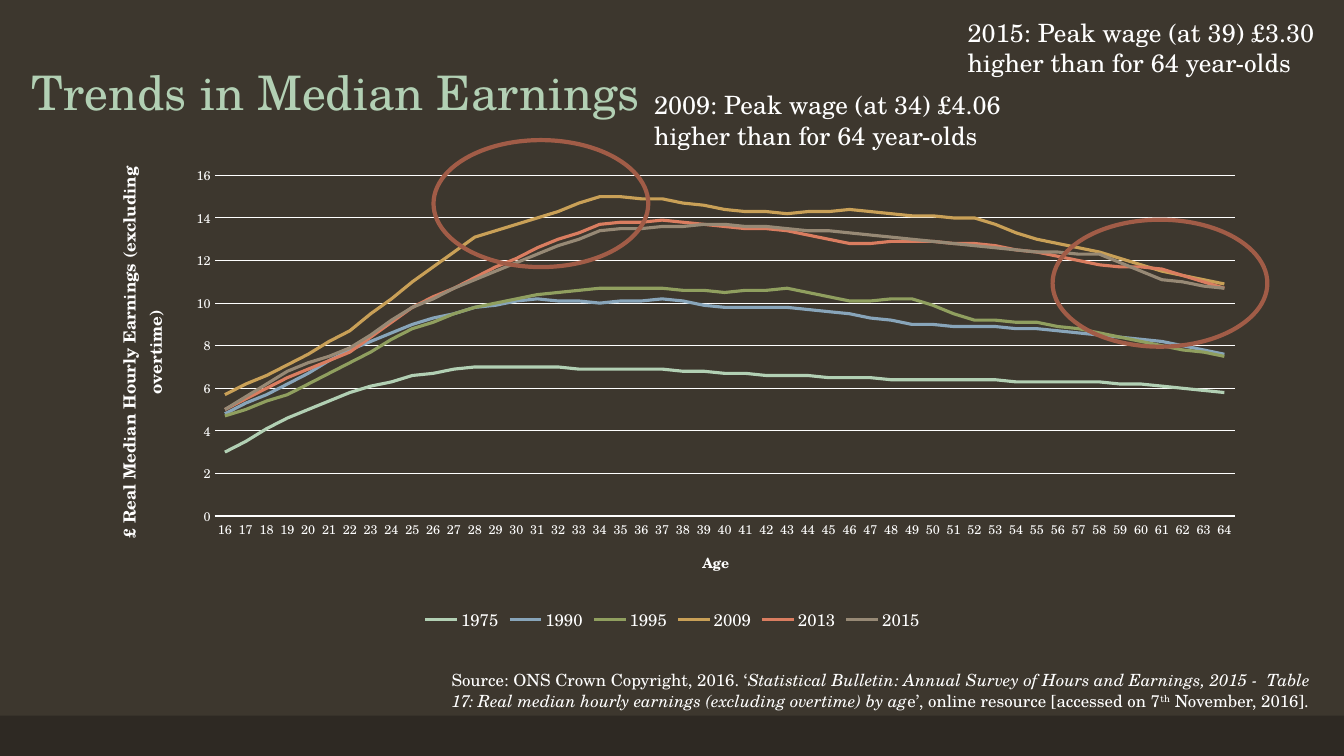
"""Build the slide on trends in median hourly earnings by age, interpolated from every third age."""
from lxml import etree
from pptx import Presentation
from pptx.chart.data import CategoryChartData
from pptx.dml.color import RGBColor
from pptx.enum.chart import XL_CHART_TYPE, XL_LEGEND_POSITION, XL_MARKER_STYLE, XL_TICK_MARK
from pptx.enum.shapes import MSO_SHAPE
from pptx.enum.text import MSO_ANCHOR
from pptx.oxml.ns import qn
from pptx.util import Inches, Pt

FONT = "TeX Gyre Schola"
WHITE = "FFFFFF"
BACKGROUND = "3D372E"
AGE_STEP = 3


def color(hex_code):
    return RGBColor.from_string(hex_code)


def add_text(runs, left, top, width, height, size=18, fill=WHITE, anchor=MSO_ANCHOR.TOP, spacing=1.0):
    frame = slide.shapes.add_textbox(Inches(left), Inches(top), Inches(width), Inches(height)).text_frame
    frame.word_wrap = True
    frame.vertical_anchor = anchor
    paragraph = frame.paragraphs[0]
    paragraph.line_spacing = spacing
    for words, style in runs:
        run = paragraph.add_run()
        run.text = words
        run.font.name = FONT
        run.font.size = Pt(size)
        run.font.color.rgb = color(fill)
        run.font.italic = style == "italic"
        if style == "superscript":
            run.font._element.set("baseline", "30000")


presentation = Presentation()
presentation.slide_width = Inches(13.33)
presentation.slide_height = Inches(7.5)
slide = presentation.slides.add_slide(presentation.slide_layouts[6])
slide.background.fill.solid()
slide.background.fill.fore_color.rgb = color(BACKGROUND)

footer_band = slide.shapes.add_shape(MSO_SHAPE.RECTANGLE, 0, Inches(7.1), Inches(13.33), Inches(0.4))
footer_band.shadow.inherit = False
footer_band.fill.solid()
footer_band.fill.fore_color.rgb = color("2E2923")
footer_band.line.fill.background()

add_text([("Trends in Median Earnings", "")], 0.21, 0, 11.5, 1.25,
         size=34, fill="B2D0B4", anchor=MSO_ANCHOR.BOTTOM, spacing=0.9)

earnings_by_year = {
    "1975": ("B2D0B4", [3, 4.6, 5.8, 6.6, 7, 7, 6.9, 6.9, 6.7, 6.6, 6.5, 6.4, 6.4, 6.3, 6.3, 6.1, 5.8]),
    "1990": ("88A5BA", [4.8, 6.2, 7.8, 9, 9.8, 10.2, 10, 10.2, 9.8, 9.8, 9.5, 9, 8.9, 8.8, 8.5, 8.2, 7.6]),
    "1995": ("909F5F", [4.7, 5.7, 7.2, 8.8, 9.8, 10.4, 10.7, 10.7, 10.5, 10.7, 10.1, 10.2, 9.2, 9.1, 8.6, 8, 7.5]),
    "2009": ("C9A057", [5.7, 7.1, 8.7, 11, 13.1, 14, 15, 14.9, 14.4, 14.2, 14.4, 14.1, 14, 13, 12.4, 11.5, 10.9]),
    "2013": ("DA7D60", [5, 6.5, 7.7, 9.8, 11.2, 12.6, 13.7, 13.9, 13.6, 13.4, 12.8, 12.9, 12.8, 12.4, 11.8, 11.6, 10.7]),
    "2015": ("978975", [5, 6.8, 7.9, 9.8, 11.1, 12.3, 13.4, 13.6, 13.7, 13.5, 13.3, 13, 12.7, 12.4, 12.3, 11.1, 10.7]),
}
earnings_data = CategoryChartData(number_format="0.0")
earnings_data.categories = [str(age) for age in range(16, 65)]
for year, (_, knots) in earnings_by_year.items():
    earnings = [round(start + (end - start) * step / AGE_STEP, 1)
                for start, end in zip(knots, knots[1:]) for step in range(AGE_STEP)]
    earnings_data.add_series(year, earnings + knots[-1:])
earnings_chart = slide.shapes.add_chart(
    XL_CHART_TYPE.LINE, Inches(0.92), Inches(1.55), Inches(11.5), Inches(4.76), earnings_data).chart
earnings_chart.has_title = False
earnings_chart.font.name = FONT
earnings_chart.font.size = Pt(10)
earnings_chart.font.color.rgb = color(WHITE)

earnings_chart.has_legend = True
year_legend = earnings_chart.legend
year_legend.position = XL_LEGEND_POSITION.BOTTOM
year_legend.include_in_layout = False
year_legend.font.name = FONT
year_legend.font.size = Pt(12)
year_legend.font.color.rgb = color(WHITE)

for year_line in earnings_chart.plots[0].series:
    year_line.smooth = False
    year_line.marker.style = XL_MARKER_STYLE.NONE
    year_line.format.line.width = Pt(2.25)
    year_line.format.line.color.rgb = color(earnings_by_year[year_line.name][0])

age_axis = earnings_chart.category_axis
pay_axis = earnings_chart.value_axis
for axis, title, title_size in (
        (age_axis, "Age", 10),
        (pay_axis, "£ Real Median Hourly Earnings (excluding overtime)", 12)):
    axis.major_tick_mark = axis.minor_tick_mark = XL_TICK_MARK.NONE
    axis.tick_labels.font.name = FONT
    axis.tick_labels.font.size = Pt(9)
    axis.tick_labels.font.color.rgb = color(WHITE)
    axis.axis_title.text_frame.text = title
    title_font = axis.axis_title.text_frame.paragraphs[0].runs[0].font
    title_font.name = FONT
    title_font.size = Pt(title_size)
    title_font.bold = True
    title_font.color.rgb = color(WHITE)

pay_axis.minimum_scale = 0
pay_axis.maximum_scale = 16
pay_axis.major_unit = 2
pay_axis.tick_labels.number_format = "0"
pay_axis.tick_labels.number_format_is_linked = False
pay_axis.format.line.fill.background()
for rule in (age_axis.format.line, pay_axis.major_gridlines.format.line):
    rule.width = Pt(0.75)
    rule.color.rgb = color(WHITE)

plot_area = earnings_chart._chartSpace.chart.plotArea
for old_layout in plot_area.findall(qn("c:layout")):
    plot_area.remove(old_layout)
layout = etree.Element(qn("c:layout"))
plot_area.insert(0, layout)
manual = etree.SubElement(layout, qn("c:manualLayout"))
for tag, value in (("layoutTarget", "inner"), ("xMode", "edge"), ("yMode", "edge"),
                   ("x", "0.105"), ("y", "0.04"), ("w", "0.88"), ("h", "0.71")):
    etree.SubElement(manual, qn(f"c:{tag}")).set("val", value)

add_text([("Source: ONS Crown Copyright, 2016. ‘", ""),
          ("Statistical Bulletin: Annual Survey of Hours and Earnings, 2015 -  Table 17: "
           "Real median hourly earnings (excluding overtime) by ag", "italic"),
          ("e’, online resource [accessed on 7", ""),
          ("th", "superscript"),
          (" November, 2016].", "")], 4.38, 6.6, 8.82, 0.5, size=12)

for left, top in ((4.3, 1.39), (10.44, 2.18)):
    highlight = slide.shapes.add_shape(MSO_SHAPE.OVAL, Inches(left), Inches(top), Inches(2.13), Inches(1.26))
    highlight.shadow.inherit = False
    highlight.fill.background()
    highlight.line.width = Pt(3)
    highlight.line.color.rgb = color("A15C47")

for peak, left, top in (
        ("2009: Peak wage (at 34) £4.06 higher than for 64 year-olds", 6.39, 0.84),
        ("2015: Peak wage (at 39) £3.30 higher than for 64 year-olds", 9.5, 0.12)):
    add_text([(peak, "")], left, top, 4.33, 0.71)

presentation.save("out.pptx")
